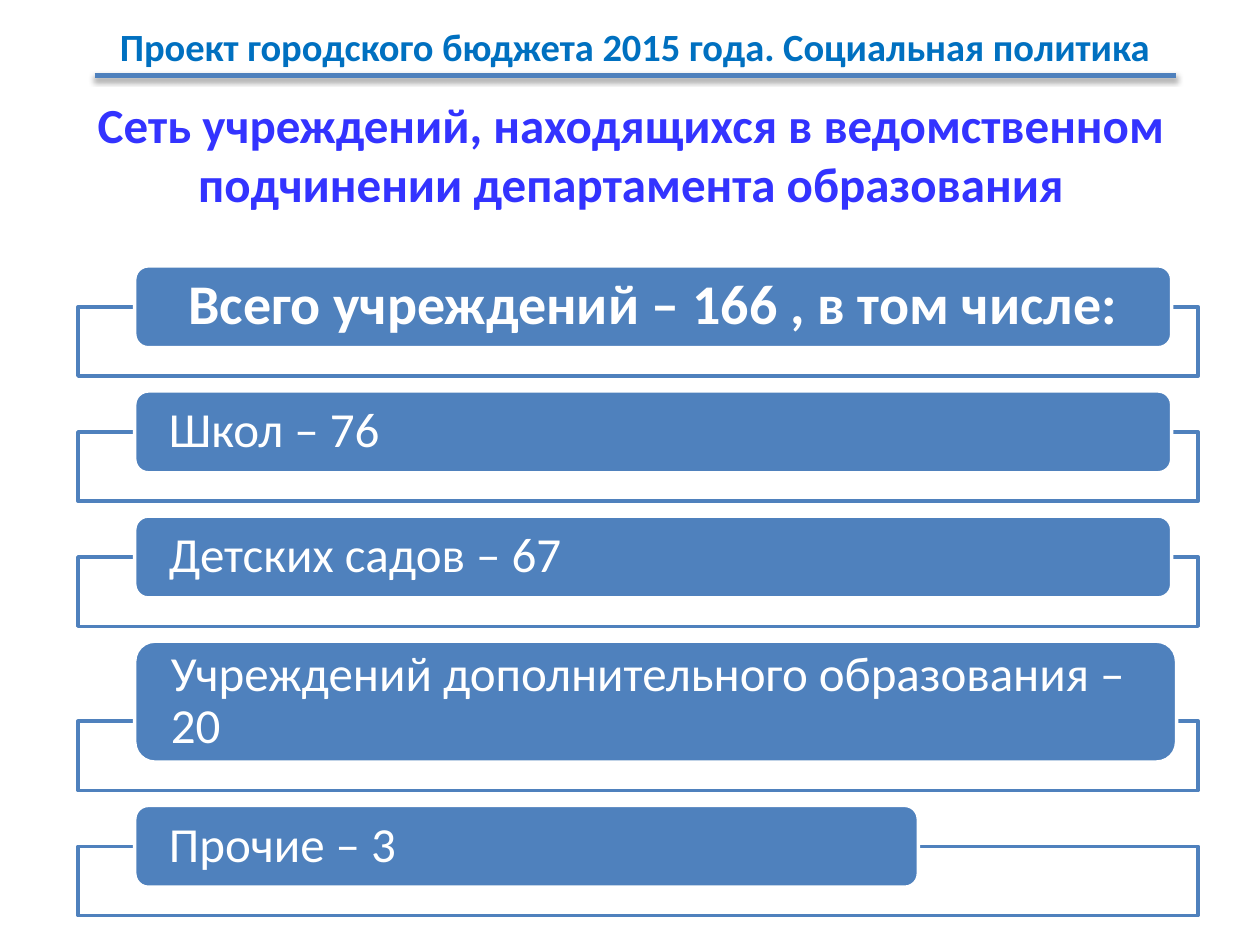
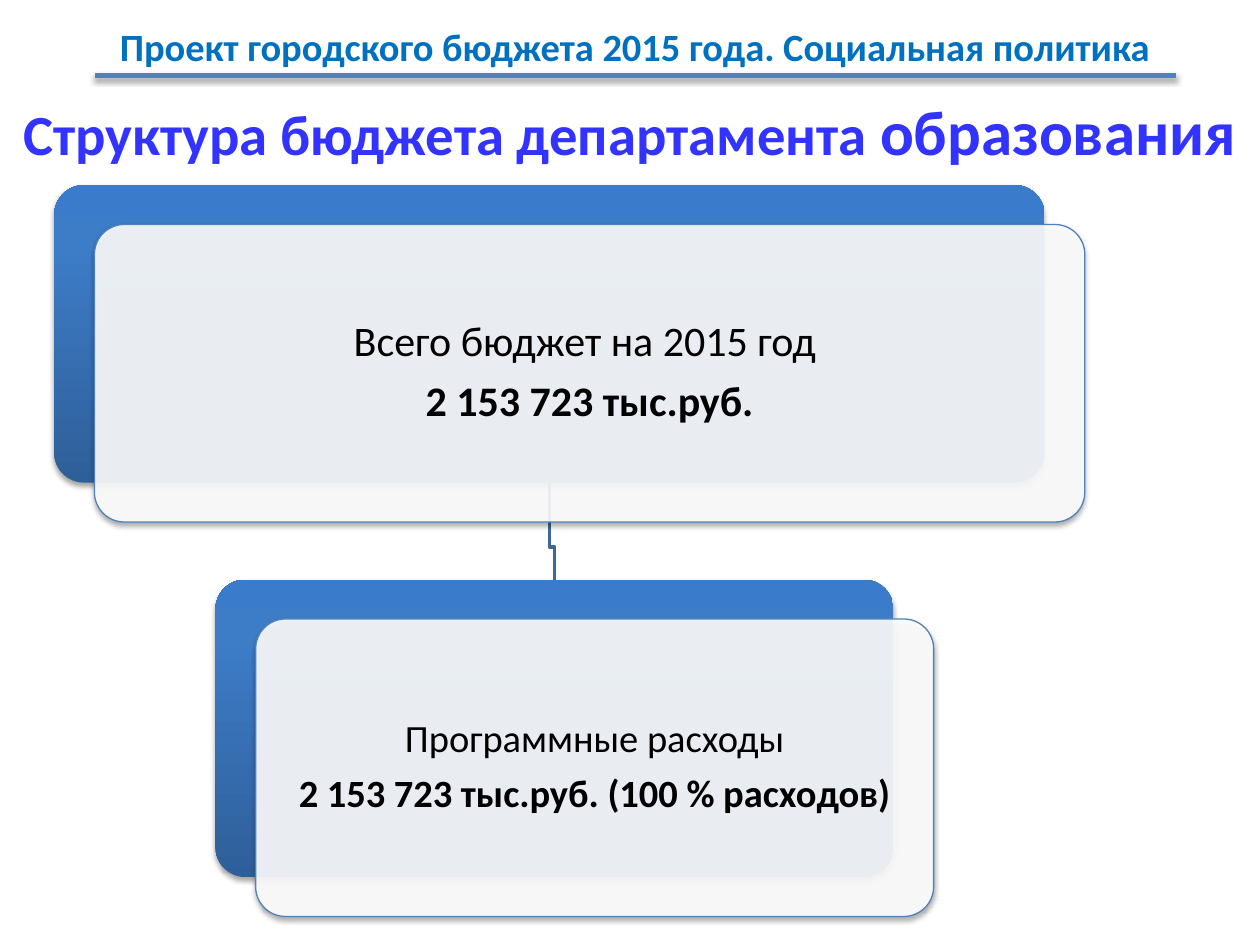
from lxml import etree
from pptx import Presentation
from pptx import util as u
from pptx.dml.color import RGBColor
from pptx.enum import shapes, text
from pptx.oxml import ns

Pt = u.Pt
BLUE = RGBColor(0x4F, 0x81, 0xBD)
HEADER_BLUE = RGBColor(0x00, 0x70, 0xC0)
TITLE_BLUE = RGBColor(0x33, 0x33, 0xFF)
LINK_BLUE = RGBColor(0x3F, 0x67, 0x97)
WHITE = RGBColor(0xFF, 0xFF, 0xFF)
BLACK = RGBColor(0x00, 0x00, 0x00)
GRADIENT = [(0, RGBColor(0x2F, 0x5F, 0x99)), (80, RGBColor(0x3D, 0x7C, 0xC7)),
            (100, RGBColor(0x3A, 0x7C, 0xCB))]
CENTER, LEFT = text.PP_ALIGN.CENTER, text.PP_ALIGN.LEFT
RECT, ROUND = shapes.MSO_SHAPE.RECTANGLE, shapes.MSO_SHAPE.ROUNDED_RECTANGLE


def sub(parent, tag, **attrs):
    """Append a drawing element with the given attributes."""
    return etree.SubElement(parent, ns.qn("a:" + tag),
                            {k: str(v) for k, v in attrs.items()})


class Deck:
    font = "Calibri"
    header = "Проект городского бюджета 2015 года. Социальная политика"

    def __init__(self):
        self.prs = Presentation()
        self.prs.slide_width, self.prs.slide_height = Pt(720), Pt(540)
        self.s = None

    def slide(self, title, box):
        """Start a slide with the shared header, its rule and a title."""
        self.s = self.prs.slides.add_slide(self.prs.slide_layouts[6])
        self.textbox((42.5, 9.4, 640.8, 33.8), [(self.header, 22)], HEADER_BLUE,
                     text.MSO_ANCHOR.TOP)
        self.rule(54, 671.8, 43.2)
        self.textbox(box, title, TITLE_BLUE)

    def paragraph(self, p, runs, color, align=CENTER):
        p.alignment = align
        for words, size, bold in runs:
            r = p.add_run()
            r.text = words
            r.font.name, r.font.size, r.font.bold = self.font, Pt(size), bold
            r.font.color.rgb = color

    def textbox(self, box, runs, color, anchor=text.MSO_ANCHOR.MIDDLE):
        tf = self.s.shapes.add_textbox(*map(Pt, box)).text_frame
        tf.word_wrap, tf.vertical_anchor = True, anchor
        self.paragraph(tf.paragraphs[0], [(t, size, True) for t, size in runs], color)

    def shadow(self, sp):
        effects = sub(sp._element.spPr, "effectLst")
        shade = sub(effects, "outerShdw", blurRad=Pt(3.1), dist=Pt(1.8),
                    dir=5400000, rotWithShape=0)
        sub(sub(shade, "srgbClr", val=BLACK), "alpha", val=35000)

    def rule(self, left, right, y):
        line = self.s.shapes.add_connector(shapes.MSO_CONNECTOR.STRAIGHT,
                                           Pt(left), Pt(y), Pt(right), Pt(y))
        line.line.color.rgb, line.line.width = BLUE, Pt(3)
        self.shadow(line)

    def shape(self, kind, box, fill, line=None, width=2, alpha=None, adj=None,
              shadow=False):
        sp = self.s.shapes.add_shape(kind, *map(Pt, box))
        if adj is not None:
            sp.adjustments[0] = adj
        if fill is GRADIENT:
            self.gradient(sp)
        else:
            sp.fill.solid()
            sp.fill.fore_color.rgb = fill
        if alpha is not None:
            color = sp._element.spPr.find(ns.qn("a:solidFill"))[0]
            sub(color, "alpha", val=alpha * 1000)
        if line is None:
            sp.line.fill.background()
        else:
            sp.line.color.rgb, sp.line.width = line, Pt(width)
        if shadow:
            self.shadow(sp)
        else:
            sp.shadow.inherit = False
        return sp

    def gradient(self, sp):
        sp.fill.gradient()
        sp.fill.gradient_angle = 90
        stops = sp._element.spPr.find(ns.qn("a:gradFill")).find(ns.qn("a:gsLst"))
        for old in list(stops):
            stops.remove(old)
        for pos, color in GRADIENT:
            sub(sub(stops, "gs", pos=pos * 1000), "srgbClr", val=color)

    def label(self, sp, lines, size, color, inset, align=CENTER):
        """Write (words, bold) lines into a shape, one paragraph each."""
        tf = sp.text_frame
        tf.word_wrap, tf.vertical_anchor = True, text.MSO_ANCHOR.MIDDLE
        tf.margin_left = tf.margin_right = Pt(inset[0])
        tf.margin_top = tf.margin_bottom = Pt(inset[1])
        for i, (words, bold) in enumerate(lines):
            p = tf.add_paragraph() if i else tf.paragraphs[0]
            p.line_spacing = 0.9
            if i < len(lines) - 1:
                p.space_after = Pt(0.35 * size)
            self.paragraph(p, [(words, size, bold)], color, align)

    def row(self, top, width, height, words, size, bold, align):
        """Draw a pill over its frame and return the top of the next row."""
        frame_top = top + height - 23.4
        self.shape(RECT, (44.6, frame_top, 640.1, 39.6), WHITE, BLUE, alpha=90)
        pill = self.shape(ROUND, (77, top, width, height), BLUE, WHITE)
        self.label(pill, [(words, bold)], size, WHITE, (17.28, 0), align)
        return frame_top + 39.6 + 8.5

    def card(self, left, top, width, height, lines, size, inset):
        """Draw a gradient card with an offset pane that carries the text."""
        self.shape(ROUND, (left, top, width, height), GRADIENT, adj=0.1, shadow=True)
        pane = self.shape(ROUND, (left + 23, top + 22.5, width, height), WHITE, BLUE,
                          0.75, alpha=90, adj=0.1, shadow=True)
        self.label(pane, lines, size, BLACK, (inset, inset))

    def elbow(self, points):
        (x, y), *rest = [(Pt(a), Pt(b)) for a, b in points]
        path = self.s.shapes.build_freeform(x, y, scale=1.0)
        path.add_line_segments(rest, close=False)
        sp = path.convert_to_shape()
        sp.fill.background()
        sp.line.color.rgb, sp.line.width = LINK_BLUE, Pt(2)
        sp.shadow.inherit = False


def main():
    d = Deck()

    # Network of institutions
    d.slide([("Сеть учреждений, находящихся в ведомственном подчинении "
              "департамента образования", 28)], (25.2, 37.4, 670.3, 100.8))
    top = 151.9
    for width, height, words, size, bold, align in [
            (592.6, 46.8, "Всего учреждений – 166 , в том числе:", 32, True, CENTER),
            (592.6, 46.8, "Школ – 76", 28, False, LEFT),
            (592.6, 46.8, "Детских садов – 67", 28, False, LEFT),
            (595.4, 69.1, "Учреждений дополнительного образования – 20", 28, False, LEFT),
            (447.8, 46.8, "Прочие – 3", 28, False, LEFT)]:
        top = d.row(top, width, height, words, size, bold, align)

    # Budget structure
    d.slide([("Структура бюджета департамента ", 32.4), ("образования", 36)],
            (0, 49, 720, 51.1))
    total, programme = (31, 105.8, 565.9, 170), (123.1, 331.2, 387.4, 170)
    start_x, end_x = (left + width / 2 for left, _, width, _ in (total, programme))
    bottom, bend = total[1] + total[3], 312.5
    d.elbow([(start_x, bottom), (start_x, bend), (end_x, bend), (end_x, programme[1])])
    d.card(*total, [("Всего бюджет на 2015 год ", False),
                    ("2 153 723 тыс.руб.", True)], 24, 7.2)
    d.card(*programme, [("Программные расходы", False),
                        ("2 153 723 тыс.руб. (100 % расходов)", True)], 22, 6.6)

    d.prs.save("out.pptx")


if __name__ == "__main__":
    main()
